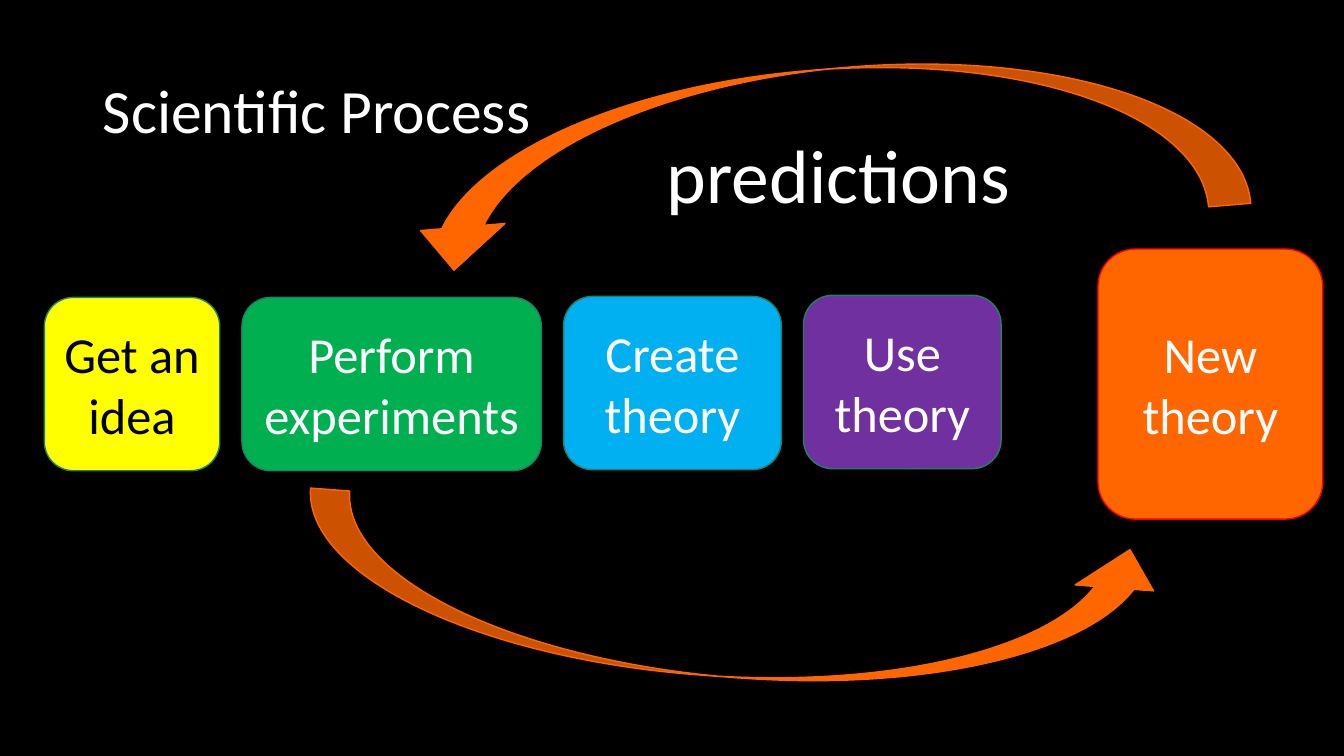
from pptx import Presentation
from pptx.dml.color import RGBColor
from pptx.enum.shapes import MSO_SHAPE as Shape
from pptx.enum.text import MSO_ANCHOR as Anchor, MSO_AUTO_SIZE as Auto, PP_ALIGN as Align
from pptx.util import Inches, Pt

WHITE, BLACK, ORANGE, TEAL = "FFFFFF", "000000", "FF6600", "1E8168"


def write(shape, text, size, color, align, anchor):
    """Fill a shape's text frame, one paragraph per line of text."""
    frame = shape.text_frame
    frame.text = text
    frame.vertical_anchor = anchor
    for para in frame.paragraphs:
        para.alignment = align
        look = {"name": "Calibri", "size": Pt(size), "bold": False}
        for key, value in look.items():
            setattr(para.font, key, value)
        para.font.color.rgb = RGBColor.from_string(color)


def draw(kind, box, fill, line):
    shape = slide.shapes.add_shape(kind, *map(Inches, box))
    shape.shadow.inherit = False
    shape.fill.solid()
    shape.fill.fore_color.rgb = RGBColor.from_string(fill)
    shape.line.color.rgb = RGBColor.from_string(line)
    shape.line.width = Pt(1)
    return shape


deck = Presentation()
deck.slide_width, deck.slide_height = Inches(13.33), Inches(7.5)
slide = deck.slides.add_slide(deck.slide_layouts[5])
slide.background.fill.solid()
slide.background.fill.fore_color.rgb = RGBColor.from_string(BLACK)

# Title
title = slide.shapes.title
place = {"left": 0.92, "top": 0.4, "width": 11.5, "height": 1.45}
for key, value in place.items():
    setattr(title, key, Inches(value))
write(title, "Scientific Process", 44, WHITE, Align.LEFT, Anchor.MIDDLE)
title.text_frame.auto_size = Auto.NONE
title.text_frame.paragraphs[0].line_spacing = 0.9

# Row of steps, each a fixed gap after the one before
GAP = 0.22
steps = [
    ("Get an idea", 2.95, 1.74, "FFFF00", BLACK),
    ("Perform\nexperiments", 2.95, 2.97, "00B050", WHITE),
    ("Create theory", 2.94, 2.16, "00B0F0", WHITE),
    ("Use theory", 2.93, 1.96, "7030A0", WHITE),
]
left = 0.44
for text, top, width, fill, color in steps:
    step = draw(Shape.ROUNDED_RECTANGLE, (left, top, width, 1.72), fill, TEAL)
    write(step, text, 36, color, Align.CENTER, Anchor.MIDDLE)
    left += width + GAP

goal = draw(Shape.ROUNDED_RECTANGLE, (10.89, 2.47, 2.23, 2.68), ORANGE, "FF0000")
write(goal, "New\ntheory", 36, WHITE, Align.CENTER, Anchor.MIDDLE)

# Loop of arrows: below to the new theory, above back to the experiments
arrows = [
    ((3.01, 5.16, 8.54, 1.56), 4.3, False),
    ((4, 0.69, 8.35, 1.68), 355.2, True),
]
for box, turn, flip in arrows:
    arrow = draw(Shape.CURVED_UP_ARROW, box, ORANGE, ORANGE)
    arrow.rotation = turn
    if flip:
        for key in ("flipH", "flipV"):
            arrow._element.spPr.xfrm.set(key, "1")

# Label inside the upper arrow
label = slide.shapes.add_textbox(*map(Inches, (6.49, 1.22, 3.65, 1.01)))
write(label, "predictions", 54, WHITE, Align.CENTER, Anchor.TOP)
label.text_frame.word_wrap = False
label.text_frame.auto_size = Auto.SHAPE_TO_FIT_TEXT

deck.save("out.pptx")
